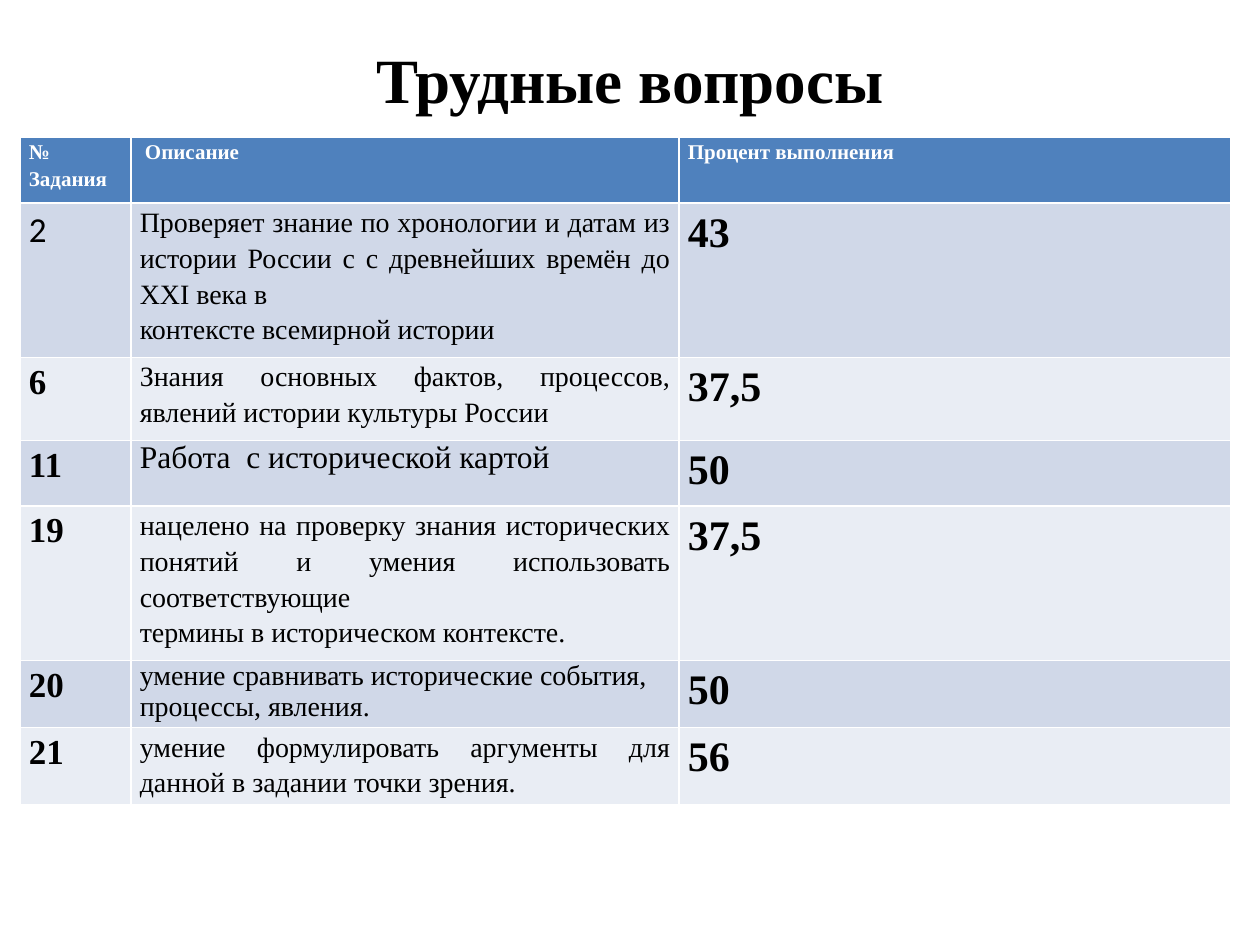
from typing import NamedTuple

from pptx import Presentation
from pptx.dml.color import RGBColor
from pptx.enum.text import MSO_ANCHOR, PP_ALIGN
from pptx.util import Inches, Pt

LEFT, CENTER, JUSTIFY = PP_ALIGN.LEFT, PP_ALIGN.CENTER, PP_ALIGN.JUSTIFY
MIDDLE = MSO_ANCHOR.MIDDLE
SERIF, SANS = "Times New Roman", "Calibri"
BLACK, WHITE, HEADER_FILL = "000000", "FFFFFF", "4F81BD"
BAND_FILLS = ("D0D8E8", "E9EDF4")
COLUMN_WIDTHS = (0.88, 4.35, 4.38)
HEADERS = ("№ Задания", " Описание", "Процент выполнения")
HEADER_HEIGHT = 0.52


class TextStyle(NamedTuple):
    size: float
    bold: bool = True
    color: str = BLACK
    font: str = SERIF
    align: PP_ALIGN = LEFT
    spacing: float = 1.15


class Task(NamedTuple):
    number: str
    description: str
    percent: str
    height: float
    description_style: TextStyle
    number_style: TextStyle = TextStyle(20)


TITLE = TextStyle(36, align=CENTER, spacing=1.0)
HEADER = TextStyle(12, color=WHITE)
PERCENT = TextStyle(24)
JUSTIFIED = TextStyle(16, bold=False, align=JUSTIFY)
COMPACT = TextStyle(16, bold=False, spacing=1.0)
LARGE = COMPACT._replace(size=18)
PLAIN_NUMBER = TextStyle(20, bold=False, font=SANS)

TASKS = (
    Task("2", "Проверяет знание по хронологии и датам из истории России с с древнейших "
         "времён до XXI века в\nконтексте всемирной истории", "43", 1.13, JUSTIFIED, PLAIN_NUMBER),
    Task("6", "Знания основных фактов, процессов, явлений истории культуры России",
         "37,5", 0.66, JUSTIFIED),
    Task("11", "Работа  с исторической картой", "50", 0.52, LARGE),
    Task("19", "нацелено на проверку знания исторических понятий и умения использовать "
         "соответствующие\nтермины в историческом контексте.", "37,5", 1.13, JUSTIFIED),
    Task("20", "умение сравнивать исторические события, процессы, явления.",
         "50", 0.52, COMPACT),
    Task("21", "умение формулировать аргументы для данной в задании точки зрения.",
         "56", 0.56, JUSTIFIED),
)


def rgb(value: str) -> RGBColor:
    return RGBColor.from_string(value)


def write_text(text_frame, text: str, style: TextStyle) -> None:
    text_frame.word_wrap = True
    text_frame.text = text
    for paragraph in text_frame.paragraphs:
        paragraph.alignment = style.align
        paragraph.line_spacing = style.spacing
        for run in paragraph.runs:
            run.font.name = style.font
            run.font.size = Pt(style.size)
            run.font.bold = style.bold
            run.font.color.rgb = rgb(style.color)


def add_title(slide) -> None:
    title = slide.shapes.add_textbox(Inches(0.5), Inches(0.3), Inches(9), Inches(0.64))
    title.text_frame.vertical_anchor = MIDDLE
    write_text(title.text_frame, "Трудные вопросы", TITLE)


def fill_row(row, height: float, fill: str, texts: tuple[str, ...],
             styles: tuple[TextStyle, ...]) -> None:
    row.height = Inches(height)
    for cell, text, style in zip(row.cells, texts, styles):
        cell.margin_left = cell.margin_right = Inches(0.07)
        cell.margin_top = cell.margin_bottom = 0
        cell.fill.solid()
        cell.fill.fore_color.rgb = rgb(fill)
        write_text(cell.text_frame, text, style)


def add_task_table(slide) -> None:
    height = HEADER_HEIGHT + sum(task.height for task in TASKS)
    table = slide.shapes.add_table(
        len(TASKS) + 1, len(HEADERS), Inches(0.16), Inches(1.09),
        Inches(sum(COLUMN_WIDTHS)), Inches(height)).table
    for column, width in zip(table.columns, COLUMN_WIDTHS):
        column.width = Inches(width)
    fill_row(table.rows[0], HEADER_HEIGHT, HEADER_FILL, HEADERS, (HEADER,) * len(HEADERS))
    for index, task in enumerate(TASKS):
        fill_row(table.rows[index + 1], task.height, BAND_FILLS[index % 2],
                 (task.number, task.description, task.percent),
                 (task.number_style, task.description_style, PERCENT))


def main() -> None:
    presentation = Presentation()
    presentation.slide_width, presentation.slide_height = Inches(10), Inches(7.5)
    slide = presentation.slides.add_slide(presentation.slide_layouts[6])
    add_title(slide)
    add_task_table(slide)
    presentation.save("out.pptx")


if __name__ == "__main__":
    main()
